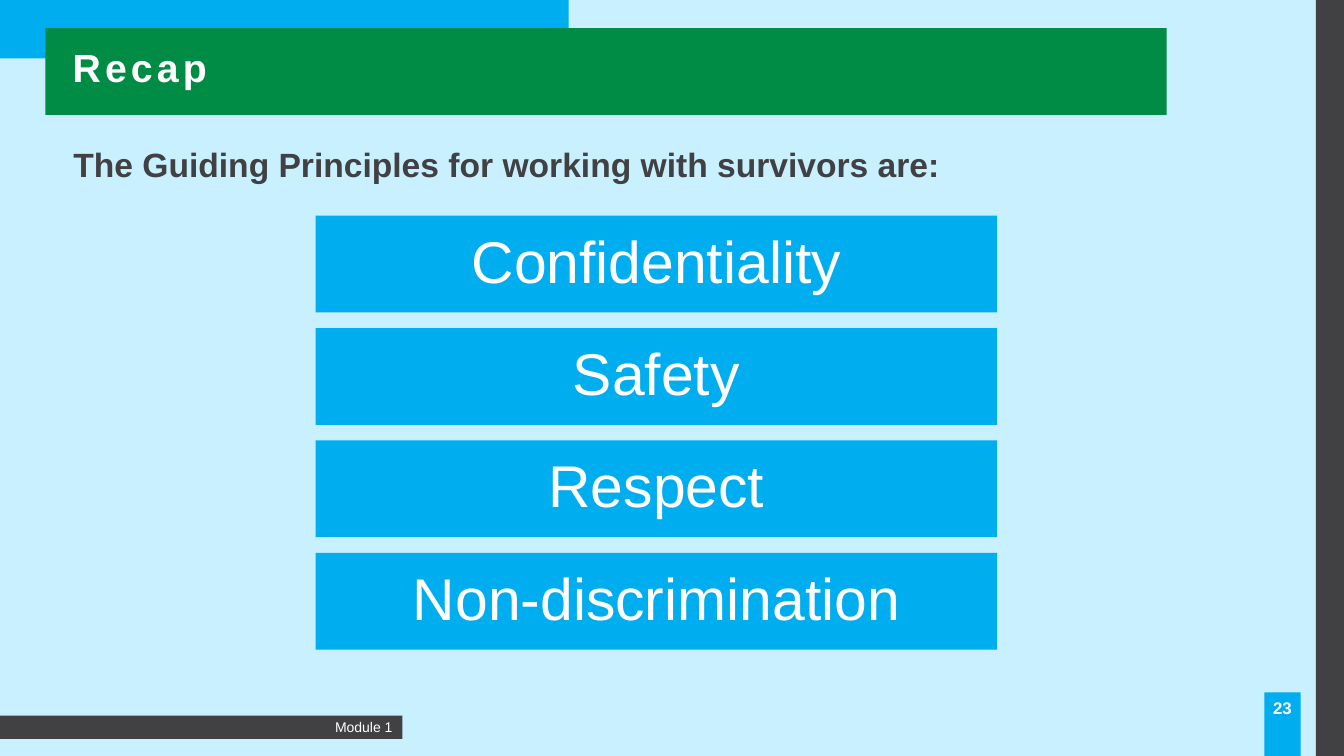
"""Build the recap slide that lists the guiding principles."""
from pptx import Presentation
from pptx.dml.color import RGBColor
from pptx.enum.shapes import MSO_SHAPE
from pptx.enum.text import MSO_ANCHOR, MSO_AUTO_SIZE, PP_ALIGN
from pptx.util import Inches, Pt

COLORS = {"sky": "C8F0FF", "blue": "00ADEF", "green": "008C44",
          "dark": "414042", "white": "FFFFFF"}
FONT = "Arial"

TITLE = "Recap"
INTRO = "The\u00a0Guiding Principles for working with\u00a0survivors are:".replace("\u00a0", " ")
PRINCIPLES = ["Confidentiality", "Safety", "Respect", "Non-discrimination"]
MODULE = "Module 1"
PAGE = "23"

BANDS = [
    ((0, 0, 5.64, 0.58), "blue"),
    ((0.45, 0.28, 11.12, 0.86), "green"),
    ((13.05, 0, 0.28, 7.5), "dark"),
]
MODULE_BOX = (0, 7.1, 3.99, 0.23)
PAGE_BOX = (12.54, 6.87, 0.36, 0.63)
TITLE_BOX = (0.62, 0.39, 9.44, 0.61)
INTRO_BOX = (0.63, 1.38, 9.68, 0.5)
LEFT, TOP, WIDTH, HEIGHT, PITCH = 3.13, 2.14, 6.76, 0.96, 1.115


def color(name):
    return RGBColor.from_string(COLORS[name])


def add_block(slide, box, fill):
    block = slide.shapes.add_shape(MSO_SHAPE.RECTANGLE, *map(Inches, box))
    block.shadow.inherit = False
    block.fill.solid()
    block.fill.fore_color.rgb = color(fill)
    block.line.fill.background()
    return block


def write(shape, text, size, ink="white", bold=False, align=PP_ALIGN.LEFT,
          anchor=MSO_ANCHOR.MIDDLE, inset=0.1, spacing=1.0):
    frame = shape.text_frame
    frame.text = text
    frame.word_wrap = True
    frame.auto_size = MSO_AUTO_SIZE.NONE
    frame.vertical_anchor = anchor
    frame.margin_left = frame.margin_right = Inches(inset)
    paragraph = frame.paragraphs[0]
    paragraph.alignment = align
    paragraph.line_spacing = spacing
    font = paragraph.runs[0].font
    font.name, font.size, font.bold = FONT, Pt(size), bold
    font.color.rgb = color(ink)
    return paragraph


def main():
    deck = Presentation()
    deck.slide_width, deck.slide_height = Inches(13.33), Inches(7.5)
    slide = deck.slides.add_slide(deck.slide_layouts[5])
    slide.background.fill.solid()
    slide.background.fill.fore_color.rgb = color("sky")

    for box, fill in BANDS:
        add_block(slide, box, fill)
    write(add_block(slide, MODULE_BOX, "dark"), MODULE, 10, align=PP_ALIGN.RIGHT)
    write(add_block(slide, PAGE_BOX, "blue"), PAGE, 12, bold=True,
          align=PP_ALIGN.CENTER, anchor=MSO_ANCHOR.TOP, inset=0.04)

    title = slide.shapes.title
    title.left, title.top, title.width, title.height = map(Inches, TITLE_BOX)
    heading = write(title, TITLE, 28, bold=True, spacing=0.9)
    heading.runs[0].font._element.set("spc", "300")
    slide.shapes.element.append(title.element)

    for row, principle in enumerate(PRINCIPLES):
        block = add_block(slide, (LEFT, TOP + row * PITCH, WIDTH, HEIGHT), "blue")
        write(block, principle, 42, align=PP_ALIGN.CENTER, inset=0.17, spacing=0.9)

    intro = slide.shapes.add_textbox(*map(Inches, INTRO_BOX))
    write(intro, INTRO, 24, ink="dark", bold=True, anchor=MSO_ANCHOR.TOP)

    deck.save("out.pptx")


if __name__ == "__main__":
    main()
